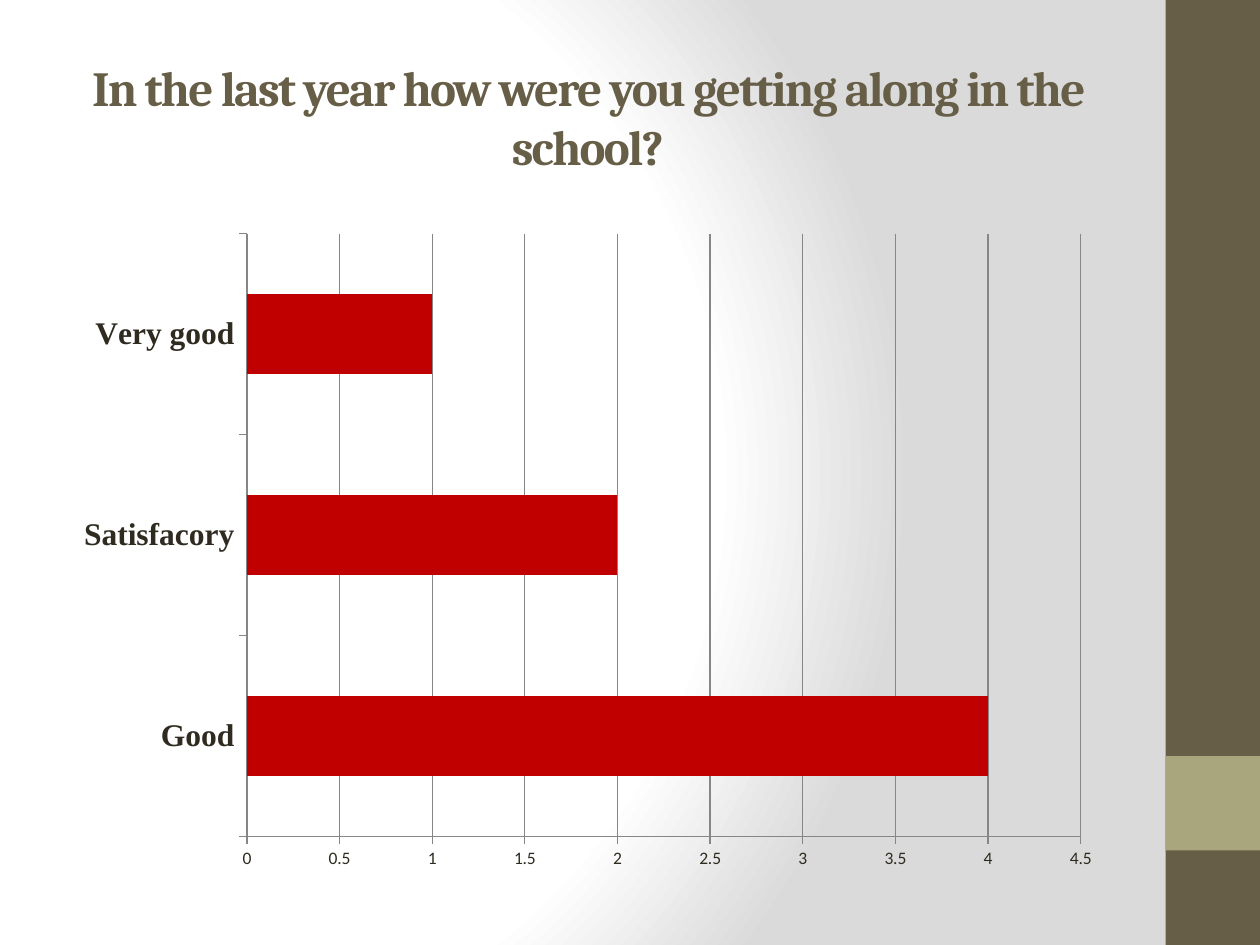
from lxml.etree import SubElement
from pptx import Presentation
from pptx.chart.data import CategoryChartData
from pptx.dml.color import RGBColor
from pptx.enum.chart import XL_CHART_TYPE, XL_TICK_MARK
from pptx.enum.shapes import MSO_SHAPE
from pptx.enum.text import MSO_ANCHOR, PP_ALIGN
from pptx.oxml.ns import qn
from pptx.util import Inches, Pt

COLORS = {
    "brown": "675E47",
    "olive": "A9A57C",
    "text": "2F2B20",
    "bar": "C00000",
    "line": "868686",
    "white": "FFFFFF",
    "gray": "DADADA",
}


def color(name):
    """Return the named palette colour."""
    return RGBColor.from_string(COLORS[name])


def set_background(slide):
    """Fill the background with a circular white to gray gradient."""
    fill = slide.background.fill
    fill.gradient()
    gradient = slide._element.find(".//" + qn("a:gradFill"))
    for child in list(gradient):
        gradient.remove(child)
    stops = SubElement(gradient, qn("a:gsLst"))
    for position, name in ((0, "white"), (75, "white"), (100, "gray")):
        stop = SubElement(stops, qn("a:gs"), pos=str(position * 1000))
        SubElement(stop, qn("a:srgbClr"), val=COLORS[name])
    circle = SubElement(gradient, qn("a:path"), path="circle")
    SubElement(circle, qn("a:fillToRect"), l="20000", t="50000", r="100000", b="50000")


def add_block(slide, top, height, fill_name):
    """Add a plain block to the side band."""
    shape = slide.shapes.add_shape(
        MSO_SHAPE.RECTANGLE, Inches(9.25), Inches(top), Inches(0.75), Inches(height)
    )
    shape.shadow.inherit = False
    shape.fill.solid()
    shape.fill.fore_color.rgb = color(fill_name)
    shape.line.fill.background()


def add_title(slide, text):
    """Add the centred, tightly spaced title."""
    box = slide.shapes.add_textbox(Inches(0.5), Inches(0.3), Inches(8.33), Inches(1.25))
    text_frame = box.text_frame
    text_frame.word_wrap = True
    text_frame.vertical_anchor = MSO_ANCHOR.MIDDLE
    text_frame.text = text
    paragraph = text_frame.paragraphs[0]
    paragraph.alignment = PP_ALIGN.CENTER
    font = paragraph.runs[0].font
    style_font(font, "Cambria", 28, "brown", True)
    font._element.set("spc", "-100")


def style_font(font, name, size, color_name, bold=False):
    """Set the face, size, colour and weight of a font."""
    font.name = name
    font.size = Pt(size)
    font.bold = bold
    font.color.rgb = color(color_name)


def style_line(line):
    """Give a chart line the thin gray style."""
    line.color.rgb = color("line")
    line.width = Pt(0.75)


def add_bar_chart(slide, categories, values):
    """Add the horizontal bar chart of answers."""
    data = CategoryChartData()
    data.categories = categories
    data.add_series("Series 1", values)
    chart = slide.shapes.add_chart(
        XL_CHART_TYPE.BAR_CLUSTERED,
        Inches(0.5), Inches(1.75), Inches(8.33), Inches(5.25), data,
    ).chart
    chart.has_legend = False
    chart.has_title = False
    style_font(chart.font, "Calibri", 10, "text")
    plot = chart.plots[0]
    plot.gap_width = 150
    plot.vary_by_categories = False
    fill = plot.series[0].format.fill
    fill.solid()
    fill.fore_color.rgb = color("bar")
    for axis in (chart.category_axis, chart.value_axis):
        axis.major_tick_mark = XL_TICK_MARK.OUTSIDE
        axis.minor_tick_mark = XL_TICK_MARK.NONE
        style_line(axis.format.line)
    style_font(chart.category_axis.tick_labels.font, "Times New Roman", 18, "text", True)
    value_axis = chart.value_axis
    value_axis.minimum_scale = 0
    value_axis.maximum_scale = 4.5
    value_axis.major_unit = 0.5
    value_axis.has_major_gridlines = True
    style_line(value_axis.major_gridlines.format.line)


def main():
    """Build the slide and save it."""
    presentation = Presentation()
    presentation.slide_width = Inches(10)
    presentation.slide_height = Inches(7.5)
    slide = presentation.slides.add_slide(presentation.slide_layouts[6])
    set_background(slide)
    add_block(slide, 0, 7.5, "brown")
    add_block(slide, 6, 0.75, "olive")
    add_title(slide, "In the last year how were you getting along in the school?")
    add_bar_chart(slide, ("Good", "Satisfacory", "Very good"), (4, 2, 1))
    presentation.save("out.pptx")


if __name__ == "__main__":
    main()
